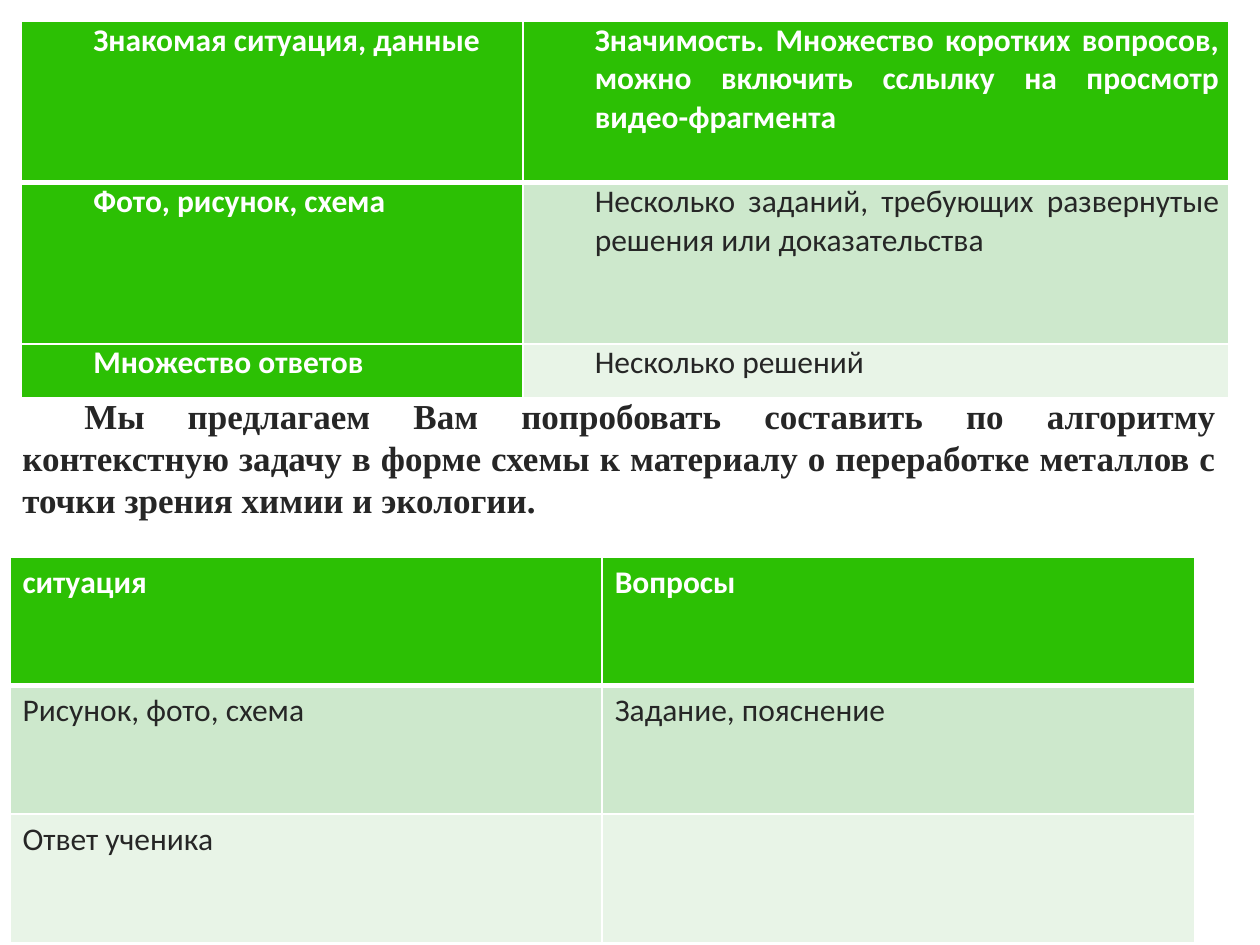
from dataclasses import dataclass

from lxml.etree import SubElement
from pptx import Presentation
from pptx.dml.color import RGBColor
from pptx.enum.text import MSO_ANCHOR, PP_ALIGN
from pptx.oxml.ns import qn
from pptx.util import Cm, Pt

WHITE = RGBColor(0xFF, 0xFF, 0xFF)
GREEN = RGBColor(0x2C, 0xC0, 0x04)
PALE_GREEN = RGBColor(0xCD, 0xE8, 0xCC)
PALEST_GREEN = RGBColor(0xE8, 0xF4, 0xE7)
DARK = RGBColor(0x26, 0x26, 0x26)
BAND_FILLS = [GREEN, PALE_GREEN, PALEST_GREEN]


@dataclass
class TableSpec:
    """Lengths are in centimetres."""
    left: float
    top: float
    widths: list[float]
    heights: list[float]
    rows: list[list[str]]
    header_column: bool = False
    justified: bool = False


ALGORITHM_TABLE = TableSpec(
    left=0.43, top=0.43, widths=[10.11, 14.22], heights=[3.25, 3.25, 1.09],
    rows=[
        ["Знакомая ситуация, данные",
         "Значимость. Множество коротких вопросов, можно включить сслылку "
         "на просмотр видео-фрагмента"],
        ["Фото, рисунок, схема",
         "Несколько заданий, требующих развернутые решения или доказательства"],
        ["Множество ответов", "Несколько решений"],
    ],
    header_column=True, justified=True)

TASK_TABLE = TableSpec(
    left=0.2, top=11.23, widths=[11.94] * 2, heights=[2.59] * 3,
    rows=[
        ["ситуация", "Вопросы"],
        ["Рисунок, фото, схема", "Задание, пояснение"],
        ["Ответ ученика", ""],
    ])

INVITATION = ("Мы предлагаем Вам попробовать составить по алгоритму контекстную "
              "задачу в форме схемы к материалу о переработке металлов с точки "
              "зрения химии и экологии.")


def format_runs(para, font_name: str, size: int, color: RGBColor, bold: bool) -> None:
    for span in para.runs:
        span.font.name = font_name
        span.font.size = Pt(size)
        span.font.color.rgb = color
        span.font.bold = bold


def set_borders(cell, top: int, bottom: int) -> None:
    """Draw white borders; call before the fill, which must follow them in the XML."""
    properties = cell._tc.get_or_add_tcPr()
    for side, width in (("L", 1), ("R", 1), ("T", top), ("B", bottom)):
        line = SubElement(properties, qn(f"a:ln{side}"), w=str(Pt(width)))
        SubElement(SubElement(line, qn("a:solidFill")), qn("a:srgbClr"), val=str(WHITE))


def draw_table(page, spec: TableSpec) -> None:
    table = page.shapes.add_table(
        len(spec.heights), len(spec.widths), Cm(spec.left), Cm(spec.top),
        Cm(sum(spec.widths)), Cm(sum(spec.heights))).table
    for column, width in zip(table.columns, spec.widths):
        column.width = Cm(width)
    for row_index, texts in enumerate(spec.rows):
        table.rows[row_index].height = Cm(spec.heights[row_index])
        for column_index, text in enumerate(texts):
            cell = table.cell(row_index, column_index)
            is_header = row_index == 0 or (spec.header_column and column_index == 0)
            set_borders(cell, top=3 if row_index == 1 else 1,
                        bottom=3 if row_index == 0 else 1)
            cell.fill.solid()
            cell.fill.fore_color.rgb = GREEN if is_header else BAND_FILLS[row_index]
            cell.text_frame.text = text
            para = cell.text_frame.paragraphs[0]
            if spec.justified:
                cell.margin_left = cell.margin_right = Cm(0.18)
                cell.margin_top = cell.margin_bottom = 0
                para.alignment = PP_ALIGN.JUSTIFY
                para._p.get_or_add_pPr().set("marL", str(Cm(1.27)))
            format_runs(para, "Calibri", 18, WHITE if is_header else DARK, is_header)


def draw_invitation(page) -> None:
    box = page.shapes.add_textbox(Cm(0.2), Cm(7.82), Cm(24.56), Cm(2.82))
    frame = box.text_frame
    frame.word_wrap = True
    frame.vertical_anchor = MSO_ANCHOR.MIDDLE
    frame.text = INVITATION
    para = frame.paragraphs[0]
    para.alignment = PP_ALIGN.JUSTIFY
    para._p.get_or_add_pPr().set("indent", str(Cm(1.25)))
    format_runs(para, "Times New Roman", 20, DARK, True)


def main() -> None:
    deck = Presentation()
    deck.slide_width, deck.slide_height = Cm(25.4), Cm(19.05)
    page = deck.slides.add_slide(deck.slide_layouts[6])
    draw_table(page, TASK_TABLE)
    draw_table(page, ALGORITHM_TABLE)
    draw_invitation(page)
    deck.save("out.pptx")


if __name__ == "__main__":
    main()
